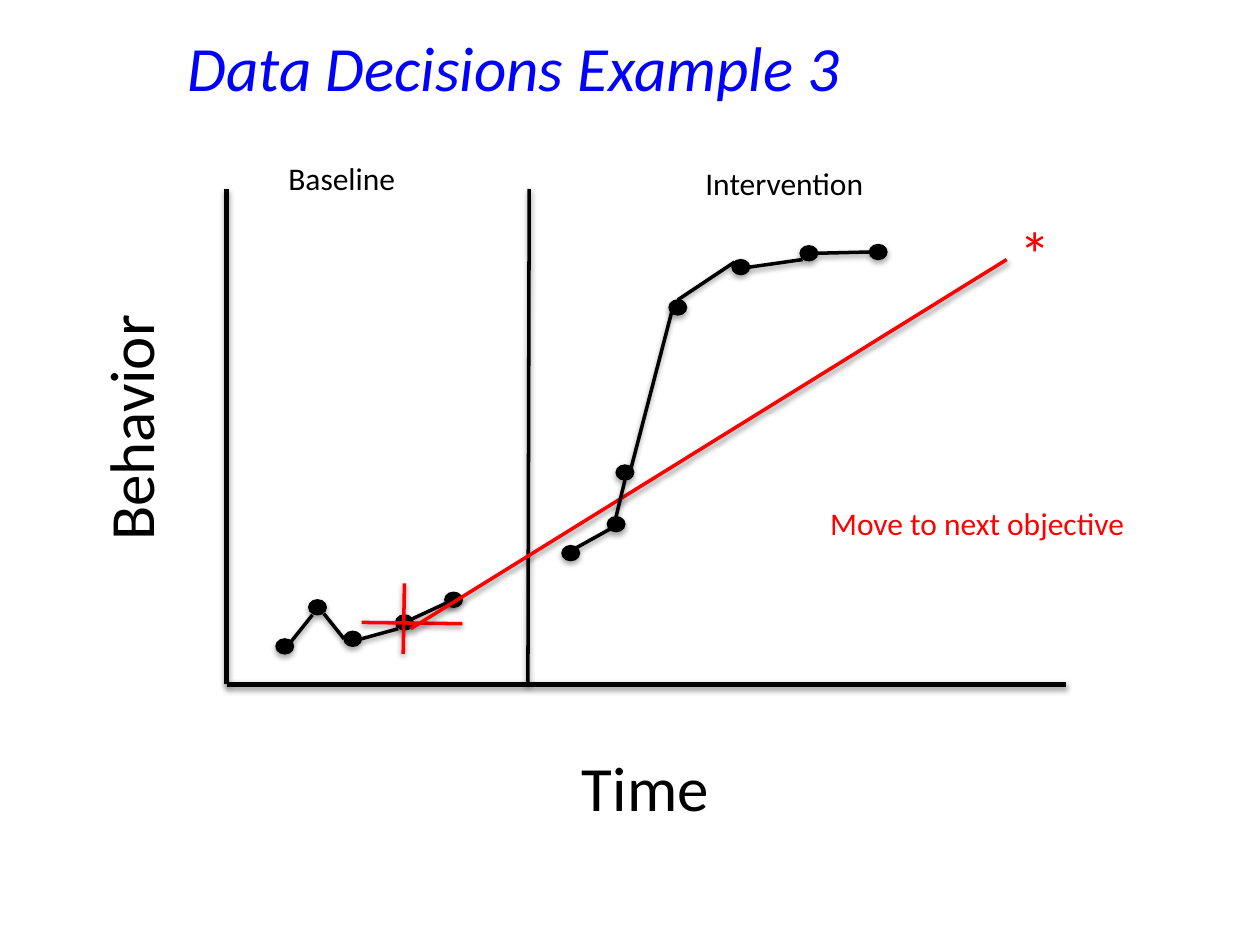
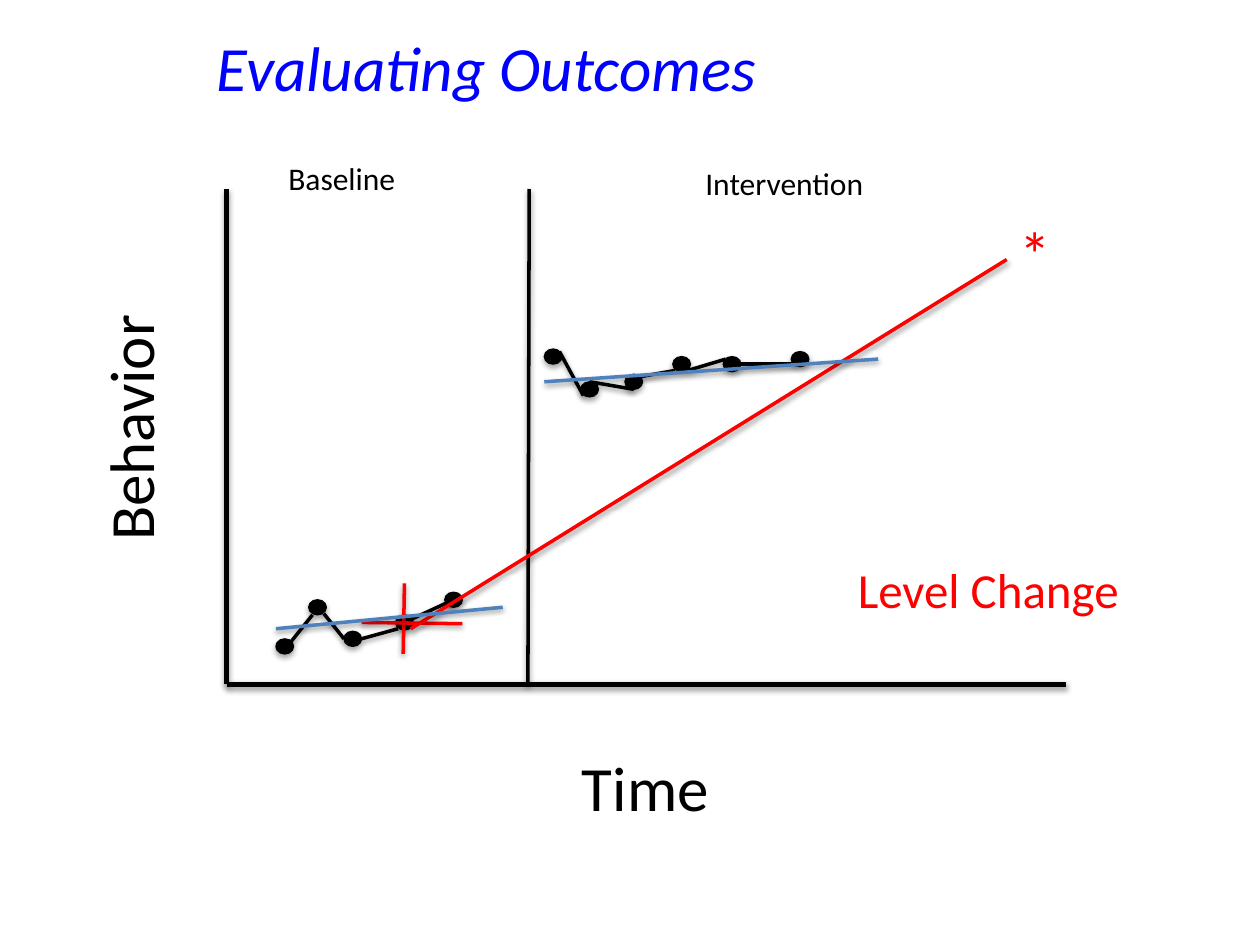
"""Builds two slides of single-case behavior graphs with baseline and intervention phases."""
from lxml.etree import SubElement
from pptx import Presentation
from pptx.dml.color import RGBColor
from pptx.enum.shapes import MSO_CONNECTOR as Connector, MSO_SHAPE as Preset
from pptx.enum.text import MSO_ANCHOR as Anchor, MSO_AUTO_SIZE as AutoSize, PP_ALIGN as Align
from pptx.oxml.ns import qn
from pptx.util import Inches, Pt

BLACK = RGBColor(0x00, 0x00, 0x00)
RED = RGBColor(0xFF, 0x00, 0x00)
BLUE = RGBColor(0x00, 0x00, 0xFF)
STEEL = RGBColor(0x4F, 0x81, 0xBD)
FONT = "Calibri"
DOT_SIZE = 0.14, 0.12

AXES = [((1.8, 1.5), (1.8, 5.43)), ((1.8, 5.43), (8.46, 5.43))]
PHASE_DIVIDER = [((4.19, 5.43), (4.2, 1.5))]
BASELINE_DOTS = [(2.19, 5.07), (2.45, 4.76), (2.73, 5.01), (3.14, 4.88), (3.53, 4.7)]
BASELINE_PATH = [
    ((2.28, 5.13), (2.48, 4.88)),
    ((2.73, 5.07), (2.57, 4.87)),
    ((2.87, 5.07), (3.16, 4.99)),
    ((3.6, 4.76), (3.21, 4.94)),
]
MEDIAN_CROSS = [((3.21, 4.63), (3.2, 5.19)), ((2.87, 4.94), (3.67, 4.95))]
AIM_LINE = [((7.99, 2.06), (3.26, 4.99))]

GRAPH_LABELS = [
    dict(text="Time", box=(4.52, 5.89, 1.22, 0.71), size=36),
    dict(text="Behavior", box=(0.03, 3.03, 2.01, 0.71), size=36, rotation=270),
    dict(text="Baseline", box=(2.19, 1.21, 1.06, 0.4), size=18),
    dict(text="Intervention", box=(5.5, 1.25, 1.47, 0.4), size=18),
    dict(text="*", box=(7.99, 1.65, 0.47, 0.71), size=36, color=RED, wrap=True),
]

EXAMPLES = [
    dict(
        title="Data Decisions Example 3",
        title_box=(1.39, 0.18, 5.99, 0.71),
        dots=[(4.46, 4.33), (4.82, 4.1), (4.89, 3.69), (5.31, 2.38),
              (5.81, 2.06), (6.35, 1.95), (6.9, 1.94)],
        path=[
            ((4.57, 4.35), (4.84, 4.2)),
            ((4.89, 4.1), (4.96, 3.81)),
            ((5.01, 3.71), (5.33, 2.48)),
            ((5.38, 2.38), (5.83, 2.08)),
            ((5.95, 2.12), (6.37, 2.06)),
            ((6.49, 2.01), (6.9, 2.0)),
        ],
        trends=[],
        decision=dict(text="Move to next objective", box=(6.49, 3.95, 2.56, 0.4),
                      size=18, color=RED),
    ),
    dict(
        title="Evaluating Outcomes",
        title_box=(1.62, 0.18, 5.76, 0.71),
        dots=[(4.32, 2.77), (4.61, 3.03), (4.96, 2.97),
              (5.34, 2.83), (5.74, 2.83), (6.28, 2.79)],
        path=[
            ((4.44, 2.79), (4.63, 3.14)),
            ((4.68, 3.03), (5.03, 3.09)),
            ((5.08, 2.99), (5.36, 2.94)),
            ((5.46, 2.94), (5.76, 2.85)),
            ((5.88, 2.89), (6.31, 2.89)),
        ],
        trends=[((2.19, 4.99), (3.99, 4.82)), ((4.32, 3.03), (6.97, 2.85))],
        decision=dict(text="Level Change", box=(6.71, 4.39, 2.56, 0.57),
                      size=28, color=RED, wrap=True),
    ),
]


def inches(values):
    """Convert plain numbers to lengths."""
    return [Inches(value) for value in values]


def cast_shadow(part, distance, opacity):
    """Give a part a soft black shadow straight below it."""
    effects = SubElement(part.element.spPr, qn("a:effectLst"))
    shadow = SubElement(effects, qn("a:outerShdw"), blurRad="40000", dist=str(distance),
                        dir="5400000", rotWithShape="0")
    tint = SubElement(shadow, qn("a:srgbClr"), val=str(BLACK))
    SubElement(tint, qn("a:alpha"), val=str(opacity * 1000))


def draw_lines(slide, segments, color=BLACK, weight=2):
    """Draw straight segments in one color and weight."""
    for start, end in segments:
        segment = slide.shapes.add_connector(Connector.STRAIGHT, *inches(start + end))
        segment.line.color.rgb = color
        segment.line.width = Pt(weight)
        cast_shadow(segment, 20000, 38)


def draw_dots(slide, corners):
    """Draw one data point at each top-left corner."""
    for corner in corners:
        dot = slide.shapes.add_shape(Preset.OVAL, *inches(corner + DOT_SIZE))
        dot.fill.solid()
        dot.fill.fore_color.rgb = BLACK
        dot.line.color.rgb = BLACK
        dot.line.width = Pt(0.75)
        cast_shadow(dot, 23000, 35)


def write(frame, text, size, color, italic=None):
    """Put one left-aligned line of text in a frame."""
    frame.text = text
    paragraph = frame.paragraphs[0]
    paragraph.alignment = Align.LEFT
    font = paragraph.font
    font.name, font.size, font.italic = FONT, Pt(size), italic
    font.color.rgb = color


def add_label(slide, text, box, size, color=BLACK, wrap=False, rotation=0):
    """Add a text label, turned if asked."""
    label = slide.shapes.add_textbox(*inches(box))
    label.rotation = rotation
    label.text_frame.word_wrap = wrap
    label.text_frame.auto_size = AutoSize.SHAPE_TO_FIT_TEXT
    write(label.text_frame, text, size, color)


def add_title(slide, text, box):
    """Place and format the slide title."""
    title = slide.shapes.title
    title.left, title.top, title.width, title.height = inches(box)
    title.text_frame.vertical_anchor = Anchor.TOP
    title.text_frame.auto_size = AutoSize.NONE
    write(title.text_frame, text, 36, BLUE, italic=True)


def add_graph(slide):
    """Draw the axes, baseline phase, aim line and labels."""
    draw_lines(slide, AXES, weight=3)
    draw_dots(slide, BASELINE_DOTS)
    draw_lines(slide, PHASE_DIVIDER + BASELINE_PATH)
    draw_lines(slide, MEDIAN_CROSS + AIM_LINE, RED)
    for label in GRAPH_LABELS:
        add_label(slide, **label)


def main():
    """Build and save the presentation."""
    deck = Presentation()
    deck.slide_width, deck.slide_height = inches((10, 7.5))
    for example in EXAMPLES:
        slide = deck.slides.add_slide(deck.slide_layouts[5])
        add_title(slide, example["title"], example["title_box"])
        add_graph(slide)
        draw_dots(slide, example["dots"])
        draw_lines(slide, example["path"])
        draw_lines(slide, example["trends"], STEEL)
        add_label(slide, **example["decision"])
    deck.save("out.pptx")


if __name__ == "__main__":
    main()
